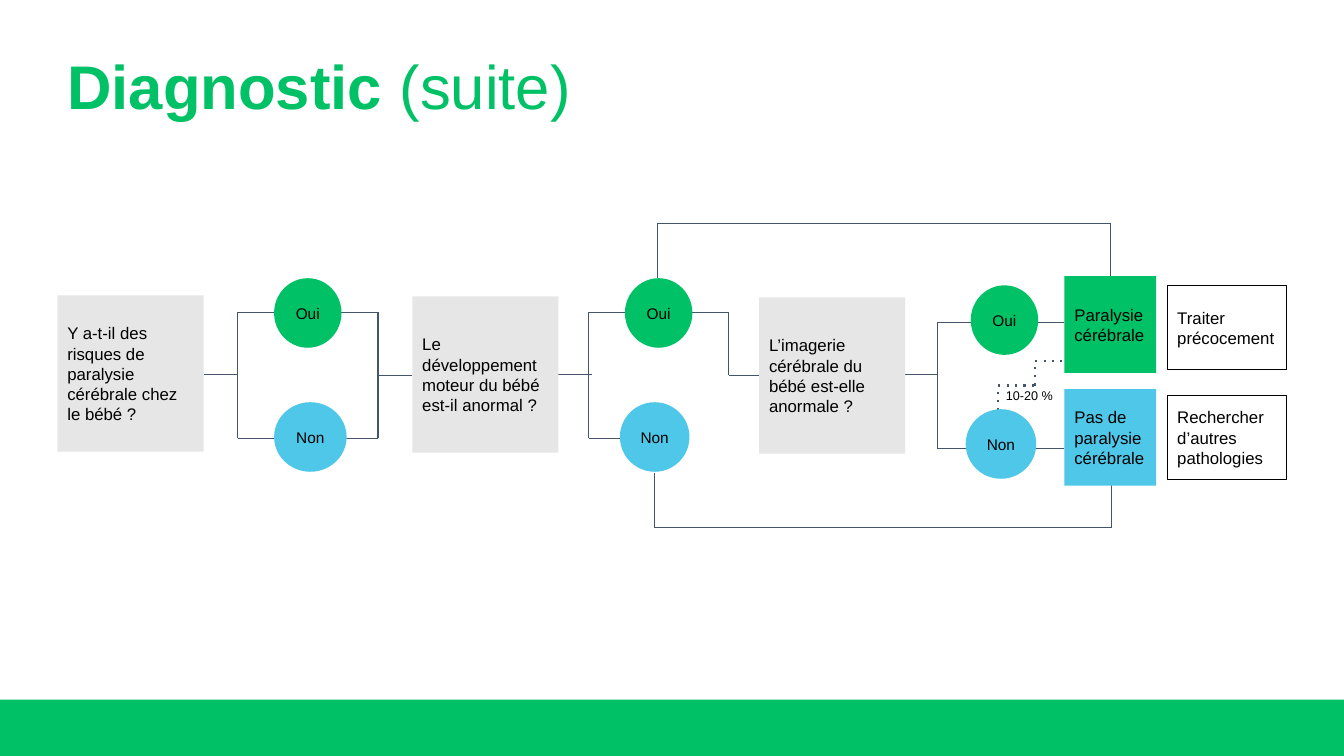
from dataclasses import dataclass
from itertools import pairwise

from lxml.etree import SubElement
from pptx import Presentation
from pptx.dml.color import RGBColor
from pptx.enum.dml import MSO_LINE
from pptx.enum.shapes import MSO_CONNECTOR, MSO_SHAPE
from pptx.enum.text import MSO_ANCHOR, PP_ALIGN
from pptx.oxml.ns import qn
from pptx.util import Pt

GREEN, BLUE, GREY = "00C165", "4FC7E8", "E7E6E6"
SLATE, BLACK, WHITE = "44546A", "000000", "FFFFFF"

Point = tuple[float, float]


@dataclass
class Node:
    text: str
    left: float
    top: float
    width: float
    height: float
    fill: str
    kind: MSO_SHAPE = MSO_SHAPE.RECTANGLE
    border: str | None = None


@dataclass
class Route:
    points: list[Point]
    dotted: bool = False


def color(value: str) -> RGBColor:
    return RGBColor.from_string(value)


def add_text(box, text: str, *, size: float, ink: str = BLACK, bold: bool = False,
             align: PP_ALIGN = PP_ALIGN.LEFT, margin: float = 7.2) -> None:
    """Append a formatted span to the first paragraph of a box."""
    frame = box.text_frame
    frame.word_wrap = True
    frame.vertical_anchor = MSO_ANCHOR.MIDDLE
    frame.margin_left = frame.margin_right = Pt(7.2)
    frame.margin_top = frame.margin_bottom = Pt(margin)
    para = frame.paragraphs[0]
    para.alignment = align
    span = para.add_run()
    span.text = text
    span.font.name = "Arial"
    span.font.size = Pt(size)
    span.font.bold = bold
    span.font.color.rgb = color(ink)


def draw_node(page, node: Node) -> None:
    shape = page.shapes.add_shape(node.kind, Pt(node.left), Pt(node.top),
                                  Pt(node.width), Pt(node.height))
    shape.shadow.inherit = False
    shape.fill.solid()
    shape.fill.fore_color.rgb = color(node.fill)
    if node.border:
        shape.line.color.rgb = color(node.border)
        shape.line.width = Pt(0.75)
    else:
        shape.line.fill.background()
    if node.text:
        is_answer = node.kind == MSO_SHAPE.OVAL
        add_text(shape, node.text, size=11 if is_answer else 12,
                 align=PP_ALIGN.CENTER if is_answer else PP_ALIGN.LEFT)


def draw_route(page, route: Route) -> None:
    for start, end in pairwise(route.points):
        line = page.shapes.add_connector(MSO_CONNECTOR.STRAIGHT,
                                         *(Pt(value) for value in start + end))
        line.line.color.rgb = color(SLATE)
        line.line.width = Pt(1.5 if route.dotted else 0.75)
        if route.dotted:
            line.line.dash_style = MSO_LINE.ROUND_DOT
            line.line._ln.find(qn("a:prstDash")).set("val", "dot")
        SubElement(line._element.spPr, qn("a:effectLst"))


def question(text: str, left: float, top: float) -> Node:
    return Node(text, left, top, 104.4, 111.6, GREY)


def answer(text: str, left: float, top: float, width: float) -> Node:
    return Node(text, left, top, width, 49.7, GREEN if text == "Oui" else BLUE,
                MSO_SHAPE.OVAL)


def diagnosis(text: str, top: float, fill: str) -> Node:
    return Node(text, 760.3, top, 65.5, 69.1, fill)


def action(text: str, top: float) -> Node:
    return Node(text, 833.8, top, 85, 60.5, WHITE, border=BLACK)


ROUTES = [
    # From the first question to the second
    Route([(145.4, 267.5), (169.9, 267.5)]),
    Route([(169.9, 223.2), (270, 223.2), (270, 313.2), (169.9, 313.2), (169.9, 223.2)]),
    Route([(270, 268.2), (294.5, 268.2)]),
    # From the second question to the third
    Route([(398.9, 267.5), (422.6, 267.5)]),
    Route([(460, 313.2), (420.5, 313.2), (420.5, 223.2), (520.6, 223.2),
           (520.6, 268), (542.2, 268)]),
    # From the third question to the diagnoses
    Route([(645.8, 267.8), (669.6, 267.8)]),
    Route([(760.3, 230.4), (669.6, 230.4), (669.6, 320.4), (760.3, 320.4)]),
    # Direct paths above and below
    Route([(469.8, 198.7), (469.8, 159.5), (793, 159.5), (793, 197.3)]),
    Route([(467.3, 337.7), (467.3, 376.9), (794.2, 376.9), (794.2, 337.7)]),
    # Exception path
    Route([(713, 305.3), (713, 275.4), (739.4, 275.4), (739.4, 258.1), (760.3, 258.1)],
          dotted=True),
]

NODES = [
    question("Y a-t-il des risques de paralysie cérébrale chez le bébé ?", 41, 211),
    question("Le développement moteur du bébé est-il anormal ?", 294.5, 211.7),
    question("L’imagerie cérébrale du bébé est-elle anormale ?", 542.2, 212.4),
    answer("Oui", 195.8, 198.7, 48.2),
    answer("Non", 195.8, 287.3, 51.8),
    answer("Oui", 446.4, 198.7, 48.2),
    answer("Non", 442.8, 287.3, 49.7),
    answer("Oui", 693.4, 203.8, 48.2),
    answer("Non", 689.8, 292.3, 50.4),
    diagnosis("Paralysie cérébrale", 197.3, GREEN),
    diagnosis("Pas de paralysie cérébrale", 277.9, BLUE),
    action("Traiter précocement", 203.8),
    action("Rechercher d’autres pathologies", 282.2),
]


def main() -> None:
    deck = Presentation()
    deck.slide_width, deck.slide_height = Pt(960), Pt(540)
    page = deck.slides.add_slide(deck.slide_layouts[6])

    # Footer band and title
    draw_node(page, Node("", 0, 499.7, 960, 40.3, GREEN))
    title = page.shapes.add_textbox(Pt(41), Pt(36), Pt(394), Pt(56.2))
    add_text(title, "Diagnostic ", size=44, ink=GREEN, bold=True, margin=3.6)
    add_text(title, "(suite)", size=44, ink=GREEN, margin=3.6)
    title.text_frame.paragraphs[0].line_spacing = 0.9

    # Decision tree, lines behind the nodes
    for route in ROUTES:
        draw_route(page, route)
    for node in NODES:
        draw_node(page, node)

    # Share of exceptions
    share = page.shapes.add_textbox(Pt(711.4), Pt(274.3), Pt(65.5), Pt(16.6))
    add_text(share, "10-20 %", size=9)

    deck.save("out.pptx")


if __name__ == "__main__":
    main()
